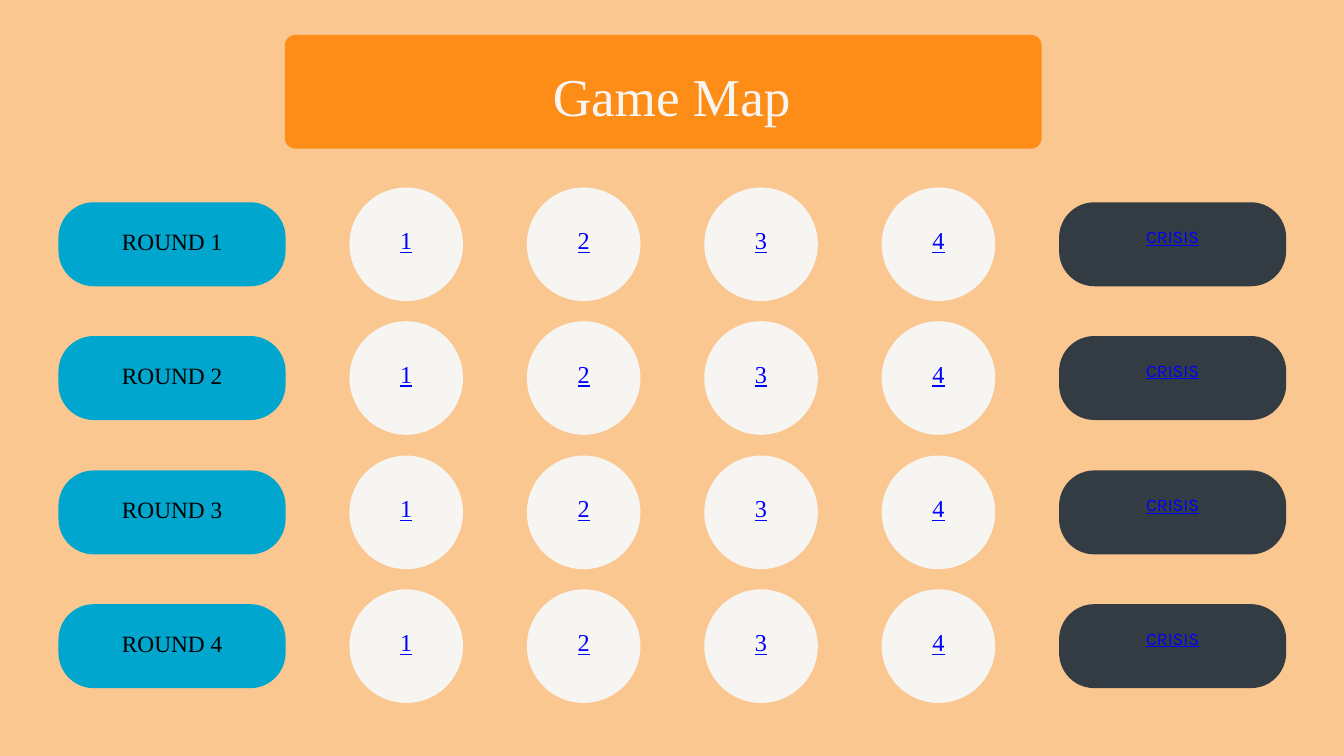
"""Build the Game Map slide: four rounds of numbered stops, each ending in a crisis."""
from lxml import etree
from pptx import Presentation
from pptx.dml.color import RGBColor
from pptx.enum.shapes import MSO_SHAPE
from pptx.enum.text import MSO_ANCHOR, MSO_AUTO_SIZE, PP_ALIGN
from pptx.oxml.ns import qn
from pptx.util import Pt

RECTANGLE, ROUNDED, OVAL = MSO_SHAPE.RECTANGLE, MSO_SHAPE.ROUNDED_RECTANGLE, MSO_SHAPE.OVAL
TOP, MIDDLE = MSO_ANCHOR.TOP, MSO_ANCHOR.MIDDLE
GROW, FIXED = MSO_AUTO_SIZE.SHAPE_TO_FIT_TEXT, MSO_AUTO_SIZE.NONE
CENTER = PP_ALIGN.CENTER

PX = 9144
SLIDE_W, SLIDE_H = 2000, 1125
ORANGE, CREAM, BLUE, SLATE = "FF8300", "F7F5F2", "00A6CE", "333C42"
BLACK, LINK = "000000", "0000FF"
SERIF, SANS = "Times New Roman", "Karla"

TITLE = "Game Map"
ROUNDS = ["ROUND 1", "ROUND 2", "ROUND 3", "ROUND 4"]
STOPS = ["1", "2", "3", "4"]
CRISIS = "CRISIS"

BANNER = (424, 52, 1126, 169)
TITLE_BOX = (112, 78, 1775, 106)
FIRST_CENTER, TWO_ROWS = 363, 399
STOP_LEFT, STOP_PITCH = 520, 264

TITLE_STYLE = {"name": SERIF, "size": 57, "color": CREAM}
ROUND_KIND = {"shape": ROUNDED, "width": 338, "height": 125, "fill": BLUE, "lift": 16,
              "font": {"name": SERIF, "size": 25, "color": BLACK}}
STOP_KIND = {"shape": OVAL, "width": 169, "height": 169, "fill": CREAM, "lift": 20,
             "font": {"name": SERIF, "size": 26, "color": LINK, "underline": True}}
CRISIS_KIND = {"shape": ROUNDED, "width": 338, "height": 125, "fill": SLATE, "lift": 28,
               "font": {"name": SANS, "size": 19, "color": LINK, "underline": True}}


def rgb(color):
    return RGBColor.from_string(color)


def emu(box):
    return [length * PX for length in box]


def add_block(slide, kind, box, color, corner=None, opacity=None):
    block = slide.shapes.add_shape(kind, *emu(box))
    block.shadow.inherit = False
    block.line.fill.background()
    block.fill.solid()
    block.fill.fore_color.rgb = rgb(color)
    if corner is not None:
        block.adjustments[0] = corner
    if opacity is not None:
        tint = block.fill._xPr.find(qn("a:solidFill"))[0]
        etree.SubElement(tint, qn("a:alpha"), val=str(opacity * 1000))


def add_label(slide, text, box, style, inset=6, anchor=MIDDLE, auto_size=FIXED):
    frame = slide.shapes.add_textbox(*emu(box)).text_frame
    margins = {f"margin_{side}": inset * PX for side in ("left", "top", "right", "bottom")}
    settings = {"word_wrap": True, "vertical_anchor": anchor, "auto_size": auto_size, **margins}
    for name, value in settings.items():
        setattr(frame, name, value)
    paragraph = frame.paragraphs[0]
    paragraph.alignment = CENTER
    paragraph.line_spacing = Pt(round(style["size"] * 1.4, 1))
    run = paragraph.add_run()
    run.text = text
    values = {**style, "size": Pt(style["size"])}
    run.font.color.rgb = rgb(values.pop("color"))
    for name, value in values.items():
        setattr(run.font, name, value)


def add_stage(slide, text, left, center, kind):
    width, height, lift = kind["width"], kind["height"], kind["lift"]
    top = center - height // 2
    corner = 0.42 if kind["shape"] == ROUNDED else None
    add_block(slide, kind["shape"], (left, top, width, height), kind["fill"], corner)
    add_label(slide, text, (left, top - lift, width, height + lift), kind["font"])


def main():
    deck = Presentation()
    deck.slide_width, deck.slide_height = emu((SLIDE_W, SLIDE_H))
    slide = deck.slides.add_slide(deck.slide_layouts[6])
    slide.background.fill.solid()
    slide.background.fill.fore_color.rgb = rgb(CREAM)

    add_block(slide, RECTANGLE, (0, 0, SLIDE_W, SLIDE_H), ORANGE, opacity=40)
    add_block(slide, ROUNDED, BANNER, ORANGE, corner=0.09, opacity=84)
    add_label(slide, TITLE, TITLE_BOX, TITLE_STYLE, inset=0, anchor=TOP, auto_size=GROW)

    for row, round_name in enumerate(ROUNDS):
        center = FIRST_CENTER + row * TWO_ROWS // 2
        add_stage(slide, round_name, 87, center, ROUND_KIND)
        for column, stop in enumerate(STOPS):
            add_stage(slide, stop, STOP_LEFT + column * STOP_PITCH, center, STOP_KIND)
        add_stage(slide, CRISIS, 1576, center, CRISIS_KIND)

    deck.save("out.pptx")


if __name__ == "__main__":
    main()
